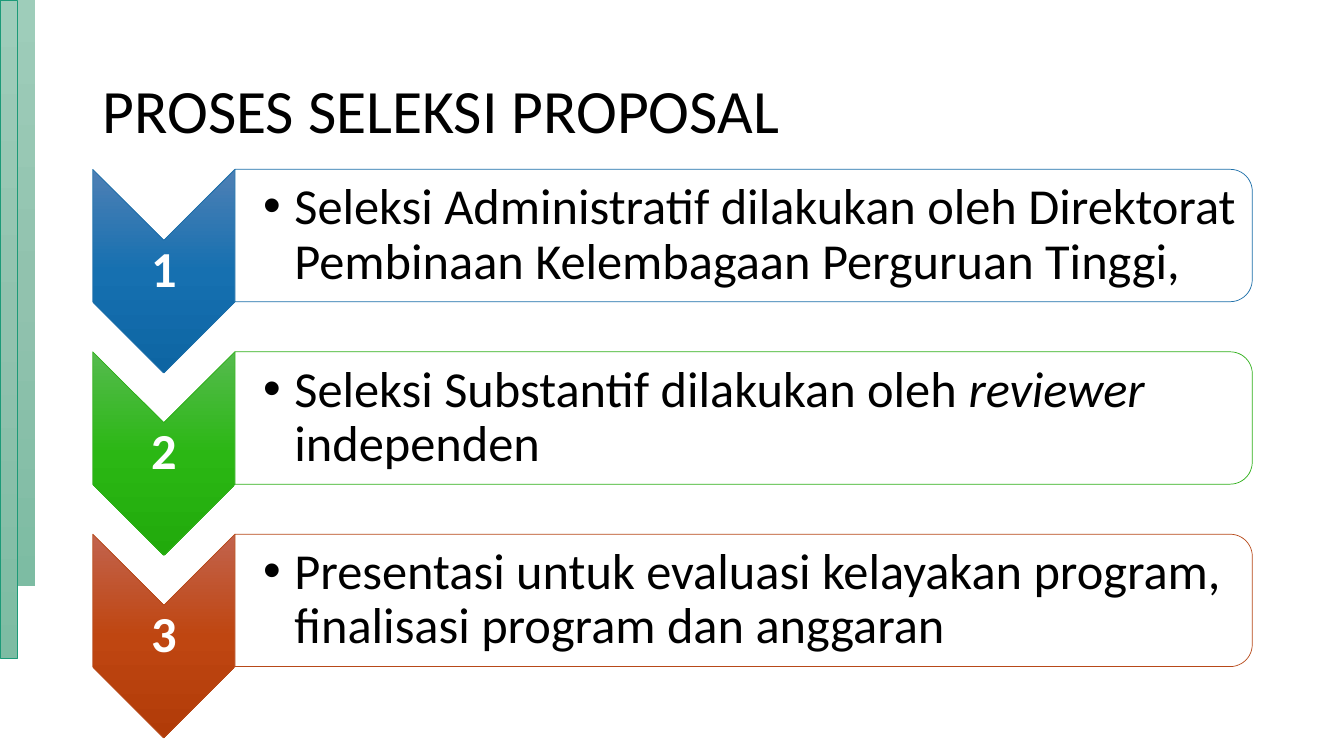
from dataclasses import dataclass

from lxml import etree
from pptx import Presentation, util as u
from pptx.dml.color import RGBColor
from pptx.enum import shapes, text
from pptx.oxml.ns import qn


@dataclass(frozen=True)
class Theme:
    font: str = "Calibri"
    title_size: int = 44
    body_size: int = 36
    line_width: float = 0.5
    ink: str = "000000"
    white: str = "FFFFFF"
    strip: tuple = ("9ECDBA", "91C2AE", "7DBCA3")
    strip_line: str = "1D9A78"


THEME = Theme()

# Each step: number, gradient, outline, runs as (wording, italic)
STEPS = [
    ("1", ("4E80B5", "1670B0", "0D65A3"), "1D6FA9",
     [("Seleksi Administratif dilakukan oleh Direktorat "
       "Pembinaan Kelembagaan Perguruan Tinggi,", False)]),
    ("2", ("55BB4E", "2BB714", "21AA0B"), "30B01B",
     [("Seleksi Substantif dilakukan oleh ", False), ("reviewer", True),
      (" independen", False)]),
    ("3", ("C2634D", "BF4611", "B13B08"), "B74919",
     [("Presentasi untuk evaluasi kelayakan program, "
       "finalisasi program dan anggaran", False)]),
]


def inches(*lengths):
    return [u.Inches(length) for length in lengths]


def fill_gradient(shape, colours):
    """Run the colours evenly from the top of the page downwards."""
    shape.fill.gradient()
    gradient = shape._element.spPr.find(qn("a:gradFill"))
    gradient.set("rotWithShape", "0")
    for child in list(gradient):
        gradient.remove(child)
    stops = etree.SubElement(gradient, qn("a:gsLst"))
    for index, colour in enumerate(colours):
        position = index * 100000 // (len(colours) - 1)
        stop = etree.SubElement(stops, qn("a:gs"), pos=str(position))
        etree.SubElement(stop, qn("a:srgbClr"), val=colour)
    etree.SubElement(gradient, qn("a:lin"), ang="5400000", scaled="0")


def fill_translucent(shape, colour, alpha):
    shape.fill.solid()
    shape.fill.fore_color.rgb = RGBColor.from_string(colour)
    tint = shape._element.spPr.find(qn("a:solidFill"))[0]
    etree.SubElement(tint, qn("a:alpha"), val=str(alpha * 1000))


def add_outlined(page, kind, box, line=None, turned=False):
    """Place a shape so that it covers the box, even after a quarter turn."""
    left, top, width, height = box
    if turned:
        left += (width - height) / 2
        top += (height - width) / 2
        width, height = height, width
    shape = page.shapes.add_shape(kind, *inches(left, top, width, height))
    shape.rotation = 90 if turned else 0
    shape.shadow.inherit = False
    if line:
        shape.line.color.rgb = RGBColor.from_string(line)
        shape.line.width = u.Pt(THEME.line_width)
    else:
        shape.line.fill.background()
    return shape


def add_text(page, box, runs, size, colour, insets, bold=None,
             align=text.PP_ALIGN.LEFT, hanging=None):
    frame = page.shapes.add_textbox(*inches(*box)).text_frame
    frame.word_wrap = True
    frame.vertical_anchor = text.MSO_ANCHOR.MIDDLE
    (frame.margin_left, frame.margin_top,
     frame.margin_right, frame.margin_bottom) = inches(*insets)
    para = frame.paragraphs[0]
    para.alignment = align
    para.line_spacing = 0.9
    if hanging:
        properties = para._p.get_or_add_pPr()
        properties.set("marL", str(u.Inches(hanging)))
        properties.set("indent", str(-u.Inches(hanging)))
        etree.SubElement(properties, qn("a:buFont"), typeface="Arial")
        etree.SubElement(properties, qn("a:buChar"), char="•")
    for wording, italic in runs:
        span = para.add_run()
        span.text = wording
        span.font.name = THEME.font
        span.font.size = u.Pt(size)
        span.font.bold = bold
        span.font.italic = italic
        span.font.color.rgb = RGBColor.from_string(colour)


def add_side_strips(page, box):
    left, top, width, height = box
    strip_width = 0.17
    strips = [(left + width - strip_width, 0.89, None),
              (left, 1, THEME.strip_line)]
    for strip_left, share, line in strips:
        strip = add_outlined(page, shapes.MSO_SHAPE.RECTANGLE,
                             (strip_left, top, strip_width, height * share), line)
        fill_gradient(strip, THEME.strip)


def add_title(page, box):
    add_text(page, box, [("PROSES SELEKSI PROPOSAL", False)],
             THEME.title_size, THEME.ink, (0.1, 0.05, 0.1, 0.05))


def add_step(page, box, number, colours, line, runs):
    left, top, width, height = box
    arrow_width = 1.41
    panel_height = 0.65 * height
    inset = 0.03

    # Chevron with its number between notch and tip
    chevron = add_outlined(page, shapes.MSO_SHAPE.CHEVRON,
                           (left, top, arrow_width, height), line, turned=True)
    fill_gradient(chevron, colours)
    notch = arrow_width / 2
    add_text(page, (left, top + notch, arrow_width, height - 2 * notch),
             [(number, False)], THEME.body_size, THEME.white, [inset] * 4,
             bold=True, align=text.PP_ALIGN.CENTER)

    # Panel rounded on the right, with its bullet
    panel_left = left + arrow_width
    panel_width = width - arrow_width
    panel = add_outlined(page, shapes.MSO_SHAPE.ROUND_2_SAME_RECTANGLE,
                         (panel_left, top, panel_width, panel_height),
                         line, turned=True)
    fill_translucent(panel, THEME.white, 90)
    corner = 0.07
    add_text(page, (panel_left, top + corner, panel_width - corner,
                    panel_height - 2 * corner),
             runs, THEME.body_size, THEME.ink, (0.28, inset, inset, inset),
             hanging=0.31)


def add_steps(page, box):
    left, top, width, height = box
    step_height = 2.02
    pitch = (height - step_height) / (len(STEPS) - 1)
    for index, step in enumerate(STEPS):
        add_step(page, (left, top + index * pitch, width, step_height), *step)


def main():
    deck = Presentation()
    deck.slide_width, deck.slide_height = inches(13.33, 7.5)
    page = deck.slides.add_slide(deck.slide_layouts[6])
    add_side_strips(page, (0, 0, 0.35, 6.53))
    add_title(page, (0.92, 0.4, 11.5, 1.45))
    add_steps(page, (0.92, 1.68, 11.5, 5.64))
    deck.save("out.pptx")


if __name__ == "__main__":
    main()
